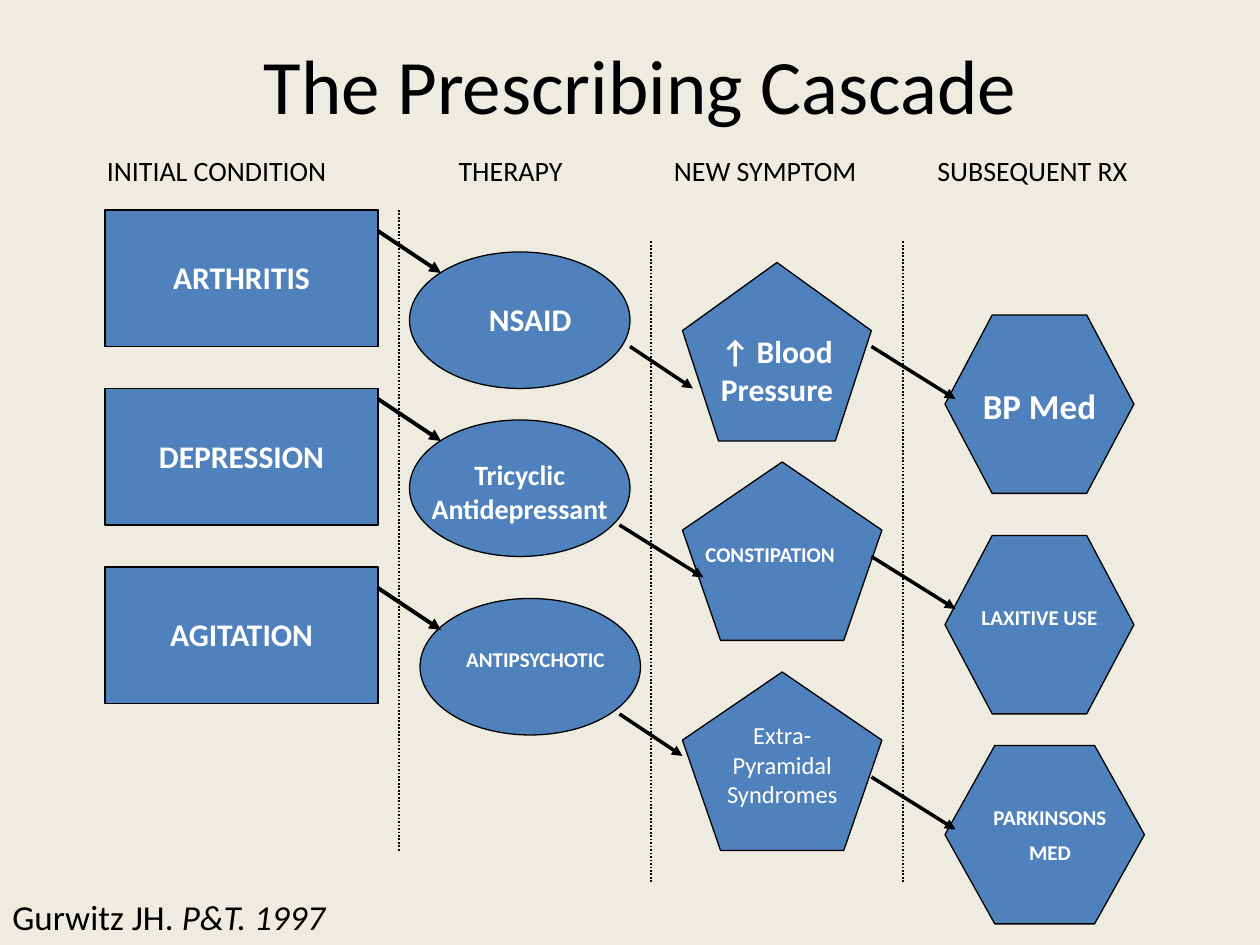
"""Build the prescribing cascade slide on a grid of 120 by 90 units."""
import lxml.etree
import pptx
import pptx.dml.color
import pptx.enum.dml
import pptx.enum.shapes
import pptx.enum.text
import pptx.oxml
import pptx.oxml.ns
import pptx.util

UNIT = 2.54 / 12
FONT = "Calibri"
COLORS = {"background": "EEECE1", "shape": "4F81BD", "ink": "000000", "label": "FFFFFF"}
SHAPE = pptx.enum.shapes.MSO_SHAPE
ALIGN = pptx.enum.text.PP_ALIGN

TITLE = "The Prescribing Cascade"
HEADINGS = ["INITIAL CONDITION", "THERAPY", "NEW SYMPTOM", "SUBSEQUENT RX"]
HEADING_TABS = [33.5, 54, 79.1]
CITATION = [("Gurwitz JH. ", False), ("P&T. 1997", True)]

# kind, height, then (left, top, width) for each row
STAGES = [
    (SHAPE.RECTANGLE, 13, [(10, 20, 26), (10, 37, 26), (10, 54, 26)]),
    (SHAPE.OVAL, 13, [(39, 24, 21), (39, 40, 21), (40, 57, 21)]),
    (SHAPE.REGULAR_PENTAGON, 17, [(65, 25, 18), (65, 44, 19), (65, 64, 19)]),
    (SHAPE.HEXAGON, 17, [(90, 30, 18), (90, 51, 18), (90, 71, 19)]),
]
ARROWS = [
    (2.25, [(36, 22, 42, 26), (36, 38, 42, 42), (36, 56, 42, 60)]),
    (2, [(60, 33, 66, 37), (59, 50, 67, 55), (59, 68, 65, 72)]),
    (2, [(83, 33, 91, 38), (83, 53, 91, 58), (83, 74, 91, 79)]),
]
DIVIDERS = [(38, 20, 38, 81), (62, 23, 62, 84), (86, 23, 86, 84)]
LABELS = [
    (["ARTHRITIS"], 13, 24, 20, 18, 1),
    (["DEPRESSION"], 11, 41, 24, 18, 1),
    (["AGITATION"], 13, 58, 20, 18, 1),
    (["NSAID"], 43, 28, 15, 18, 1),
    (["Tricyclic Antidepressant"], 37, 43, 25, 16, 2),
    (["ANTIPSYCHOTIC"], 41, 61, 20, 12, 1),
    (["↑ Blood Pressure"], 67, 31, 14, 18, 2),
    (["CONSTIPATION"], 66, 51, 18, 12, 1),
    (["Extra-Pyramidal Syndromes"], 67, 68, 15, 14, 3),
    (["BP Med"], 92, 36, 14, 20, 1),
    (["LAXITIVE USE"], 92, 57, 14, 12, 1),
    (["PARKINSONS", "MED"], 92, 76, 16, 12, 2),
]
LEFT_ALIGNED = {"CONSTIPATION"}
REGULAR = {"Extra-Pyramidal Syndromes"}


def grid(*values):
    return [pptx.util.Cm(v * UNIT) for v in values]


def color(name):
    return pptx.dml.color.RGBColor.from_string(COLORS[name])


def text_height(size, lines):
    return 1.2 + lines * size * 1.22 / 6


def add_text(slide, box, paragraphs, size, ink="ink", bold=False, align=ALIGN.LEFT, tabs=()):
    tf = slide.shapes.add_textbox(*grid(*box)).text_frame
    tf.word_wrap = True
    for i, runs in enumerate(paragraphs):
        p = tf.paragraphs[0] if i == 0 else tf.add_paragraph()
        if tabs:
            tab_list = lxml.etree.SubElement(p._p.get_or_add_pPr(), pptx.oxml.ns.qn("a:tabLst"))
            for pos in grid(*tabs):
                lxml.etree.SubElement(tab_list, pptx.oxml.ns.qn("a:tab"), pos=str(pos), algn="l")
        p.alignment = align
        if i:
            p.space_before = pptx.util.Pt(6)
        p.font.name, p.font.size, p.font.bold = FONT, pptx.util.Pt(size), bold
        p.font.color.rgb = color(ink)
        for text, italic in runs:
            r = p.add_run()
            r.text = text
            if italic:
                r.font.italic = True
    return tf


def add_line(slide, ends, width):
    line = slide.shapes.add_connector(pptx.enum.shapes.MSO_CONNECTOR.STRAIGHT, *grid(*ends))
    line.line.color.rgb = color("ink")
    line.line.width = pptx.util.Pt(width)
    lxml.etree.SubElement(line._element.spPr, pptx.oxml.ns.qn("a:effectLst"))
    return line


def add_stage(slide, kind, height, places):
    for left, top, width in places:
        sp = slide.shapes.add_shape(kind, *grid(left, top, width, height))
        sp.shadow.inherit = False
        sp.fill.solid()
        sp.fill.fore_color.rgb = color("shape")
        sp.line.color.rgb = color("ink")
        sp.line.width = pptx.util.Pt(0.75)
        if kind == SHAPE.HEXAGON:
            sp.adjustments[0] = width / 4 / height


def main():
    prs = pptx.Presentation()
    prs.slide_width, prs.slide_height = grid(120, 90)
    slide = prs.slides.add_slide(prs.slide_layouts[6])
    slide.background.fill.solid()
    slide.background.fill.fore_color.rgb = color("background")

    tf = add_text(slide, (10, 3, 102, 10), [[(TITLE, False)]], 44, align=ALIGN.CENTER)
    tf.vertical_anchor = pptx.enum.text.MSO_ANCHOR.MIDDLE
    for stage in STAGES:
        add_stage(slide, *stage)
    for width, arrows in ARROWS:
        for ends in arrows:
            ln = add_line(slide, ends, width).line._get_or_add_ln()
            lxml.etree.SubElement(ln, pptx.oxml.ns.qn("a:tailEnd"), type="triangle")
    for texts, left, top, width, size, lines in LABELS:
        align = ALIGN.LEFT if texts[0] in LEFT_ALIGNED else ALIGN.CENTER
        add_text(slide, (left, top, width, text_height(size, lines)),
                 [[(text, False)] for text in texts], size, "label", texts[0] not in REGULAR, align)
    height = text_height(20, 1)
    add_text(slide, (0, 90 - height, 36, height), [CITATION], 20)
    add_text(slide, (9, 14, 106, text_height(16, 1)), [[("\t".join(HEADINGS), False)]], 16,
             tabs=HEADING_TABS)
    for ends in DIVIDERS:
        add_line(slide, ends, 1).line.dash_style = pptx.enum.dml.MSO_LINE.ROUND_DOT
    prs.save("out.pptx")


if __name__ == "__main__":
    main()
